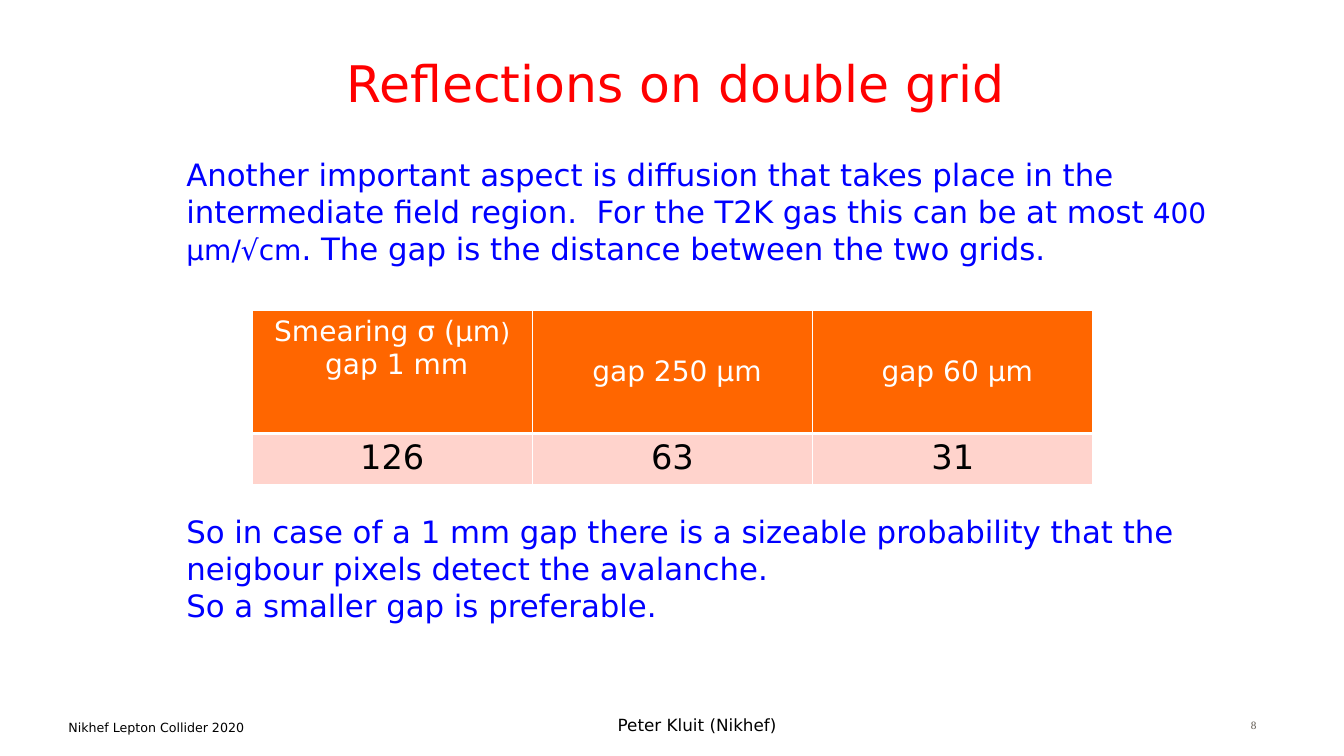
from dataclasses import dataclass

from lxml.etree import SubElement
from pptx import Presentation
from pptx.dml.color import RGBColor as RGB
from pptx.enum.text import MSO_ANCHOR as Anchor, MSO_AUTO_SIZE as AutoSize, PP_ALIGN as Align
from pptx.oxml.ns import qn
from pptx.util import Inches, Pt

COLORS = {"title": "FF0000", "body": "0000FF", "head": "FF6600", "cell": "FFD3CC",
          "white": "FFFFFF", "black": "000000", "number": "5E574E"}
SANS, SERIF = "DejaVu Sans", "Times New Roman"


@dataclass(frozen=True)
class Span:
    text: str
    size: float
    color: str = "body"
    font: str = SANS


@dataclass(frozen=True)
class Box:
    left: float
    top: float
    width: float
    height: float
    lines: list[list[Span]]
    align: Align = Align.LEFT
    anchor: Anchor = Anchor.TOP


@dataclass(frozen=True)
class Cell:
    lines: list[list[Span]]
    fill: str
    anchor: Anchor
    rule: float  # width of the bottom border in points


def add_lines(tf, lines: list[list[Span]], align: Align) -> None:
    for i, spans in enumerate(lines):
        p = tf.paragraphs[0] if i == 0 else tf.add_paragraph()
        p.alignment = align
        for span in spans:
            r = p.add_run()
            r.text = span.text
            r.font.size = Pt(span.size)
            r.font.name = span.font
            r.font.color.rgb = RGB.from_string(COLORS[span.color])


def add_box(slide, box: Box) -> None:
    sp = slide.shapes.add_textbox(*map(Inches, (box.left, box.top, box.width, box.height)))
    tf = sp.text_frame
    tf.word_wrap = True
    tf.vertical_anchor = box.anchor
    add_lines(tf, box.lines, box.align)


def add_border(cell, side: str, width: float) -> None:
    ln = SubElement(cell._tc.get_or_add_tcPr(), qn(f"a:{side}"), w=str(Pt(width)))
    fill = SubElement(ln, qn("a:solidFill"))
    SubElement(fill, qn("a:srgbClr"), val=COLORS["white"])


def fill_cell(cell, content: Cell) -> None:
    for side in ("lnL", "lnR", "lnT"):
        add_border(cell, side, 1)
    add_border(cell, "lnB", content.rule)
    cell.fill.solid()
    cell.fill.fore_color.rgb = RGB.from_string(COLORS[content.fill])
    cell.vertical_anchor = content.anchor
    add_lines(cell.text_frame, content.lines, Align.CENTER)
    for p in cell.text_frame.paragraphs:
        if p.text.startswith("gap"):
            p._p.get_or_add_pPr().set("marL", str(Inches(0.09)))


def head(lines: list[list[Span]], anchor: Anchor) -> Cell:
    return Cell(lines, "head", anchor, 3)


def gap(label: str) -> list[Span]:
    return [Span(label, 20, "white")]


FOOTERS = [
    Box(4.75, 6.9, 4.33, 0.44, [[Span("Peter Kluit (Nikhef)", 12, "black")]],
        Align.CENTER, Anchor.BOTTOM),
    Box(9.78, 6.81, 2.78, 0.5, [[Span("8", 8, "number", SERIF)]], Align.RIGHT, Anchor.BOTTOM),
    Box(0.58, 7.07, 5.37, 0.27, [[Span("Nikhef Lepton Collider 2020", 9, "black")]],
        anchor=Anchor.BOTTOM),
]
BODY = [
    Box(1.75, 1.5, 10.75, 1.2, [
        [Span("Another important aspect is diffusion that takes place in the", 22)],
        [Span("intermediate field region.  For the T2K gas this can be at most", 22),
         Span(" 400 μm/√cm", 20),
         Span(". The gap is the distance between the two grids.", 22)],
    ]),
    Box(1.75, 5.04, 10.75, 1.2, [
        [Span("So in case of a 1 mm gap there is a sizeable probability that the", 22)],
        [Span("neigbour pixels detect the avalanche.", 22)],
        [Span("So a smaller gap is preferable.", 22)],
    ]),
]
ROWS = [
    [head([[Span("Smearing σ (μm", 20, "white"), Span(")", 18, "white")], gap("gap 1 mm")],
          Anchor.TOP),
     head([gap("gap 250 μm")], Anchor.MIDDLE),
     head([gap("gap 60 μm")], Anchor.MIDDLE)],
    [Cell([[Span(value, 24, "black")]], "cell", Anchor.TOP, 1) for value in ("126", "63", "31")],
]
ROW_HEIGHTS = (1.22, 0.51)
COL_WIDTH = 2.78


def add_smearing_table(slide) -> None:
    cols = len(ROWS[0])
    frame = slide.shapes.add_table(len(ROWS), cols, Inches(2.5), Inches(3.08),
                                   Inches(COL_WIDTH * cols), Inches(sum(ROW_HEIGHTS)))
    table = frame.table
    table.horz_banding = False
    for col in table.columns:
        col.width = Inches(COL_WIDTH)
    for y, (contents, height) in enumerate(zip(ROWS, ROW_HEIGHTS)):
        table.rows[y].height = Inches(height)
        for x, content in enumerate(contents):
            fill_cell(table.cell(y, x), content)


def main() -> None:
    prs = Presentation()
    prs.slide_width, prs.slide_height = Inches(13.33), Inches(7.5)
    slide = prs.slides.add_slide(prs.slide_layouts[5])

    # Footer line
    for box in FOOTERS:
        add_box(slide, box)

    # Title
    title = slide.shapes.title
    title.left, title.top, title.width, title.height = map(Inches, (1.04, 0.29, 11.33, 0.88))
    tf = title.text_frame
    tf.auto_size = AutoSize.NONE
    tf.vertical_anchor = Anchor.BOTTOM
    add_lines(tf, [[Span("Reflections on double grid", 36, "title")]], Align.CENTER)

    # Body text and table
    for box in BODY:
        add_box(slide, box)
    add_smearing_table(slide)

    prs.save("out.pptx")


if __name__ == "__main__":
    main()
